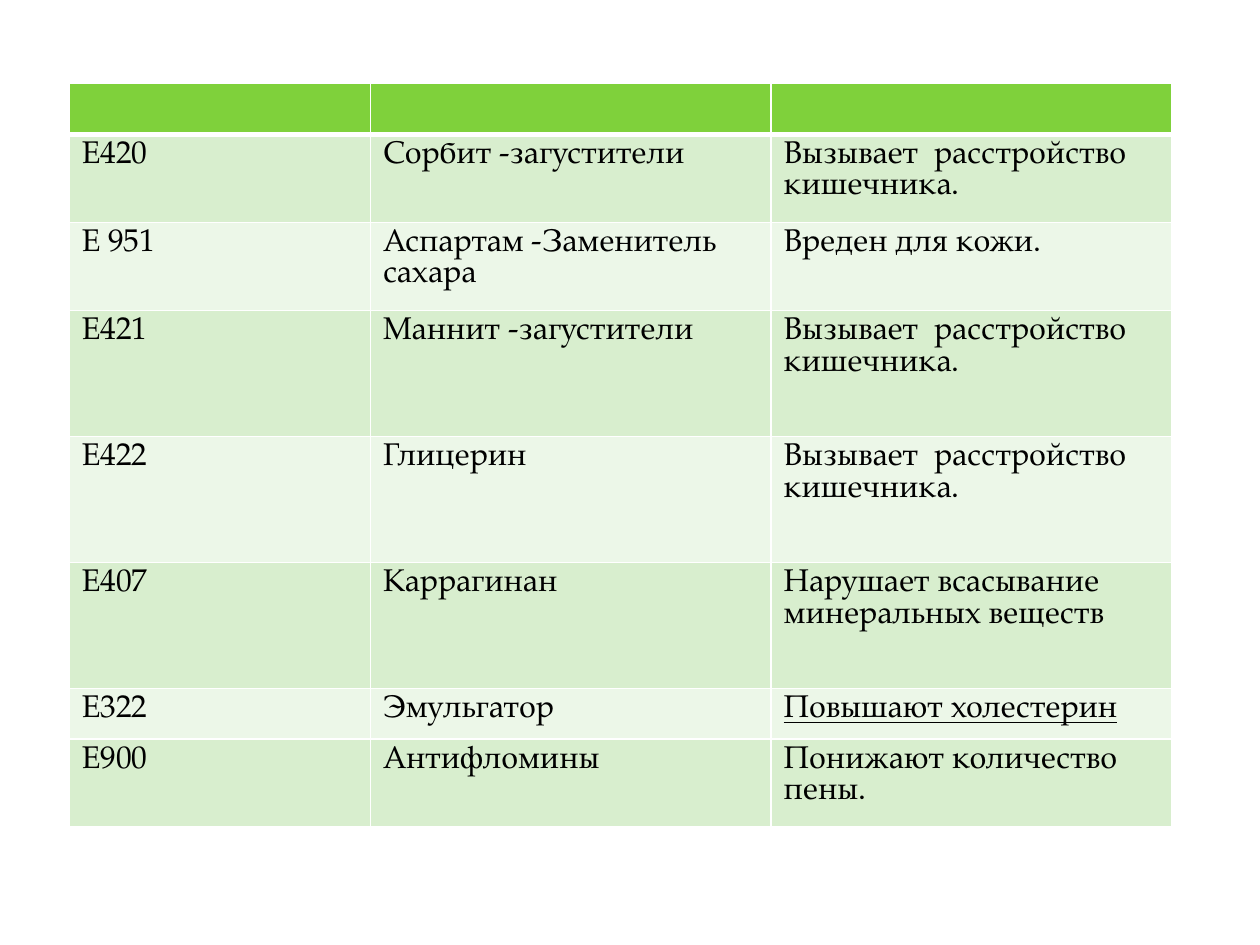
from typing import NamedTuple

from lxml.etree import SubElement
from pptx import Presentation
from pptx.dml.color import RGBColor
from pptx.oxml.ns import qn
from pptx.util import Inches, Pt

COLORS = {
    "header": "7FD13B",
    "odd": "D8EECE",
    "even": "ECF7E8",
    "border": "FFFFFF",
    "text": "000000",
}
FONT = "TeX Gyre Pagella"


class Additive(NamedTuple):
    code: str
    name: str
    effect: str
    height: float
    underline: bool = False


BOWEL_EFFECT = "Вызывает  расстройство кишечника."
ADDITIVES = [
    Additive("Е420", "Сорбит -загустители", BOWEL_EFFECT, 0.7),
    Additive("Е 951", "Аспартам -Заменитель сахара", "Вреден для кожи.", 0.7),
    Additive("Е421", "Маннит -загустители", BOWEL_EFFECT, 1),
    Additive("Е422", "Глицерин", BOWEL_EFFECT, 1),
    Additive("Е407", "Каррагинан", "Нарушает всасывание минеральных веществ", 1),
    Additive("Е322", "Эмульгатор", "Повышают холестерин", 0.4, underline=True),
    Additive("Е900", "Антифломины", "Понижают количество пены.", 0.7),
]
HEADER_HEIGHT = 0.39
COLUMN_WIDTHS = [2.39, 3.18, 3.18]


def write_text(frame, text: str, *, size: float = 18, color: str = "text",
               underline: bool = False) -> None:
    paragraph = frame.paragraphs[0]
    paragraph.line_spacing = Pt(size)
    if not text:
        return
    span = paragraph.add_run()
    span.text = text
    span.font.name = FONT
    span.font.size = Pt(size)
    span.font.underline = underline
    span.font.color.rgb = RGBColor.from_string(COLORS[color])


def style_cell(cell, fill: str, *, bottom: float = 1, top: float = 1) -> None:
    # Borders go before the fill in the cell properties
    properties = cell._tc.get_or_add_tcPr()
    for side, width in (("L", 1), ("R", 1), ("T", top), ("B", bottom)):
        line = SubElement(properties, qn(f"a:ln{side}"), w=str(Pt(width)))
        solid = SubElement(line, qn("a:solidFill"))
        SubElement(solid, qn("a:srgbClr"), val=COLORS["border"])
    cell.fill.solid()
    cell.fill.fore_color.rgb = RGBColor.from_string(COLORS[fill])


def add_additive_table(page) -> None:
    heights = [HEADER_HEIGHT] + [additive.height for additive in ADDITIVES]
    table = page.shapes.add_table(
        len(heights), len(COLUMN_WIDTHS), Inches(0.55), Inches(0.66),
        Inches(sum(COLUMN_WIDTHS)), Inches(sum(heights))).table
    for column, width in zip(table.columns, COLUMN_WIDTHS):
        column.width = Inches(width)
    for row, height in zip(table.rows, heights):
        row.height = Inches(height)

    # Empty header with a thick lower rule
    for cell in table.rows[0].cells:
        style_cell(cell, "header", bottom=3)
        write_text(cell.text_frame, "")

    # Banded rows, one for each additive
    for index, additive in enumerate(ADDITIVES, start=1):
        texts = (additive.code, additive.name, additive.effect)
        for cell, text in zip(table.rows[index].cells, texts):
            style_cell(cell, "odd" if index % 2 else "even",
                       top=3 if index == 1 else 1)
            write_text(cell.text_frame, text,
                       underline=additive.underline and text == additive.effect)


def main() -> None:
    deck = Presentation()
    deck.slide_width, deck.slide_height = Inches(10), Inches(7.5)
    page = deck.slides.add_slide(deck.slide_layouts[6])
    add_additive_table(page)
    deck.save("out.pptx")


if __name__ == "__main__":
    main()
